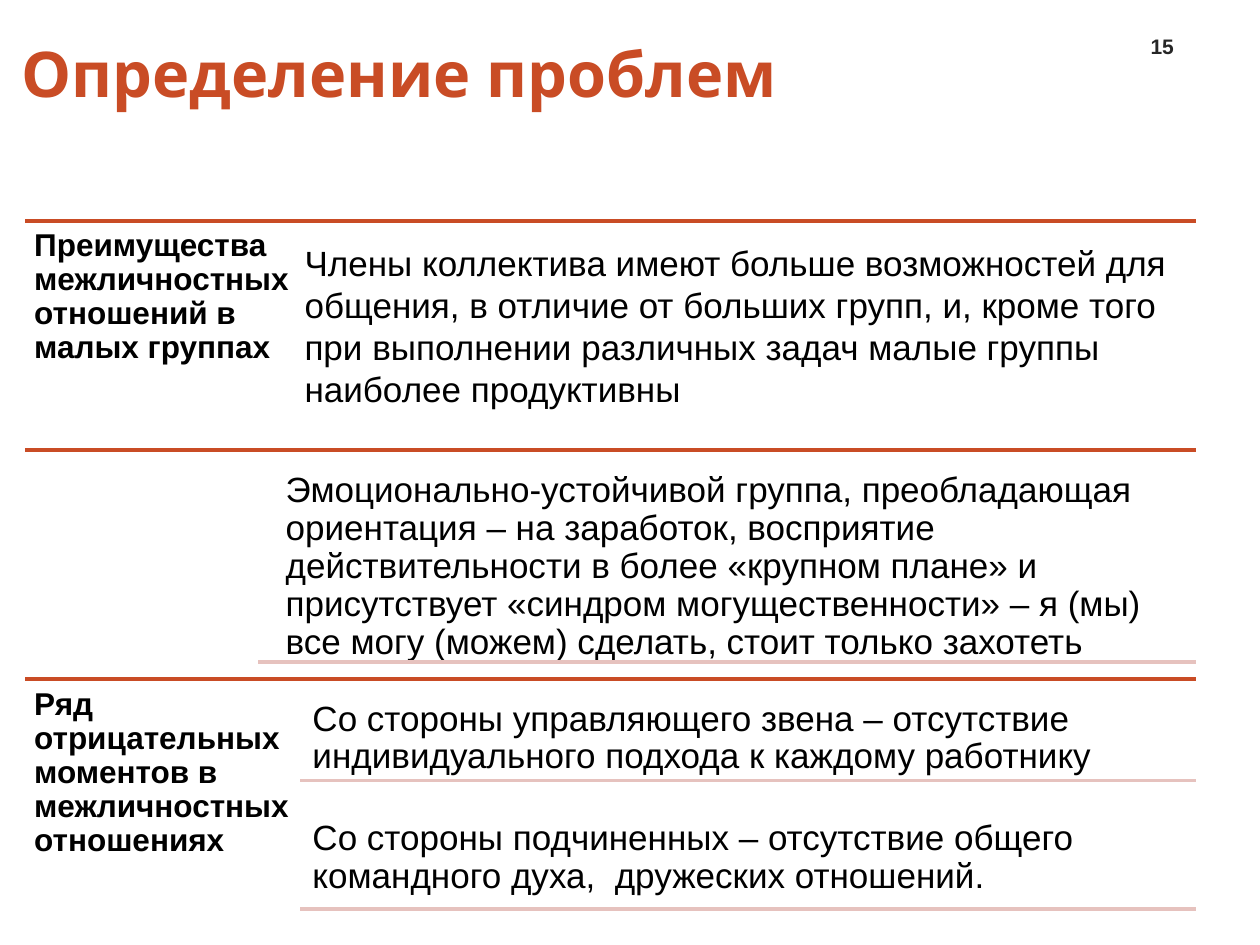
from lxml import etree
from pptx import Presentation
from pptx import util as u
from pptx.dml import color
from pptx.enum import shapes, text
from pptx.oxml import ns

ACCENT = "C94C25"
PALE = "E6C2BE"
BLACK = "000000"

SECTIONS = [
    {
        "label": "Преимущества межличностных отношений в малых группах",
        "items": [
            {
                "words": "Члены коллектива имеют больше возможностей для общения, "
                         "в отличие от больших групп, и, кроме того при выполнении "
                         "различных задач малые группы наиболее продуктивны",
                "box": (5.38, 0.28, 18.21, 3.68),
                "style": {"inset": (0.25, 0.13)},
            },
        ],
    },
    {
        "label": None,
        "items": [
            {
                "words": "Эмоционально-устойчивой группа, преобладающая ориентация – "
                         "на заработок, восприятие действительности в более «крупном "
                         "плане» и присутствует «синдром могущественности» – я (мы) "
                         "все могу (можем) сделать, стоит только захотеть",
                "box": (5.05, 0.26, 18.52, 4.04),
                "style": {"inset": (0.2, 0.2), "line_spacing": 0.9},
                "rule": (4.7, 4.28),
            },
        ],
    },
    {
        "label": "Ряд отрицательных моментов в межличностных отношениях",
        "items": [
            {
                "words": "Со стороны управляющего звена – отсутствие "
                         "индивидуального подхода к каждому работнику",
                "box": (5.59, 0.24, 17.7, 1.98),
                "style": {"inset": (0.2, 0.2), "line_spacing": 0.9},
                "rule": (5.54, 2.04),
            },
            {
                "words": "Со стороны подчиненных – отсутствие общего "
                         "командного духа,  дружеских отношений.",
                "box": (5.59, 2.65, 17.7, 1.75),
                "style": {"inset": (0.2, 0.2), "line_spacing": 0.9},
                "rule": (5.54, 4.63),
            },
        ],
    },
]


def rgb(value):
    """Turn a hex string into a colour."""
    return color.RGBColor.from_string(value)


def add_text(page, words, box, size=20, font="Arial", fill=BLACK, bold=False,
             inset=(0.25, 0.13), line_spacing=None, align=text.PP_ALIGN.LEFT,
             anchor=text.MSO_ANCHOR.TOP):
    """Place one paragraph in a wrapped text box."""
    frame = page.shapes.add_textbox(*map(u.Cm, box)).text_frame
    frame.word_wrap = True
    frame.vertical_anchor = anchor
    frame.margin_left = frame.margin_right = u.Cm(inset[0])
    frame.margin_top = frame.margin_bottom = u.Cm(inset[1])
    para = frame.paragraphs[0]
    para.alignment = align
    if line_spacing:
        para.line_spacing = line_spacing
    span = para.add_run()
    span.text = words
    span.font.name = font
    span.font.size = u.Pt(size)
    span.font.bold = bold
    span.font.color.rgb = rgb(fill)


def add_rule(page, left, right, top, fill):
    """Draw a horizontal rule without a shadow."""
    rule = page.shapes.add_connector(
        shapes.MSO_CONNECTOR.STRAIGHT,
        u.Cm(left), u.Cm(top), u.Cm(right), u.Cm(top))
    rule.line.width = u.Pt(2)
    rule.line.color.rgb = rgb(fill)
    etree.SubElement(rule._element.spPr, ns.qn("a:effectLst"))


def add_header(page, box):
    """Place the title and the page number."""
    left, top, width, height = box
    add_text(page, "Определение проблем", (left, top, 21.2, height), size=36,
             font="Karla", fill=ACCENT, bold=True, inset=(0, 0.13),
             anchor=text.MSO_ANCHOR.MIDDLE)
    add_text(page, "15", (left + width - 1.4, top + 0.48, 1.4, 0.84), size=12,
             fill="262626", bold=True, align=text.PP_ALIGN.CENTER,
             anchor=text.MSO_ANCHOR.BOTTOM)


def add_section(page, box, section):
    """Place a ruled section with its label and items."""
    left, top, width, height = box
    right = left + width
    add_rule(page, left, right, top, ACCENT)
    if section["label"]:
        add_text(page, section["label"], (left, top, 5.53, height), size=18,
                 bold=True, inset=(0.18, 0.18), line_spacing=0.9)
    for item in section["items"]:
        across, down, item_width, item_height = item["box"]
        add_text(page, item["words"],
                 (left + across, top + down, item_width, item_height),
                 **item["style"])
        if "rule" in item:
            across, down = item["rule"]
            add_rule(page, left + across, right, top + down, PALE)


def main():
    """Build and save the deck."""
    deck = Presentation()
    deck.slide_width, deck.slide_height = u.Cm(25.4), u.Cm(19.05)
    page = deck.slides.add_slide(deck.slide_layouts[6])
    add_header(page, (0.43, 0, 23.7, 2.92))
    height = 4.62
    for index, section in enumerate(SECTIONS):
        add_section(page, (0.51, 4.45 + index * height, 23.6, height), section)
    deck.save("out.pptx")


if __name__ == "__main__":
    main()
